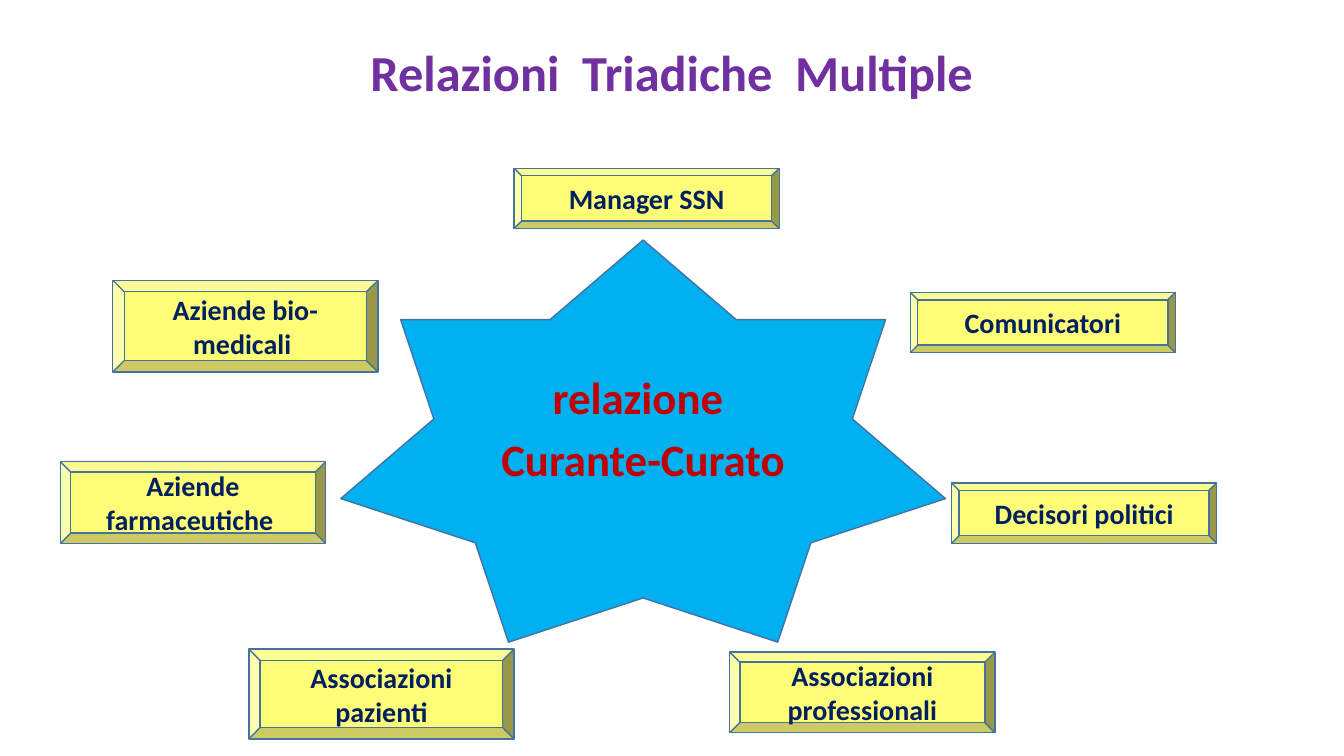
from pptx import Presentation
from pptx.dml.color import RGBColor
from pptx.enum.shapes import MSO_SHAPE
from pptx.enum.text import MSO_ANCHOR, PP_ALIGN
from pptx.util import Pt

PURPLE = RGBColor(0x70, 0x30, 0xA0)
RED = RGBColor(0xC0, 0x00, 0x00)
NAVY = RGBColor(0x00, 0x20, 0x60)
SKY = RGBColor(0x00, 0xB0, 0xF0)
YELLOW = RGBColor(0xFF, 0xFD, 0x78)
OUTLINE = RGBColor(0x43, 0x73, 0x9E)

# Content: boxes are (words, left, top, height) in points
TITLE = "Relazioni  Triadiche  Multiple"
CORE = ["relazione ", "Curante-Curato"]
ACTORS = [
    ("Manager SSN", 367.2, 120.2, 43.2),
    ("Comunicatori", 650.2, 208.8, 43.2),
    ("Decisori politici", 679.7, 344.9, 43.2),
    ("Associazioni professionali", 521.3, 465.8, 57.6),
    ("Associazioni pazienti", 177.8, 463.7, 64.1),
    ("Aziende farmaceutiche ", 43.2, 329.8, 58.3),
    ("Aziende bio-medicali ", 80.6, 200.2, 65.5),
]
ACTOR_WIDTH = 189.4


def write(frame, lines, size, color, line_spacing=1.0, gap=0):
    frame.word_wrap = True
    frame.vertical_anchor = MSO_ANCHOR.MIDDLE
    frame.text = "\n".join(lines)
    for i, paragraph in enumerate(frame.paragraphs):
        paragraph.alignment = PP_ALIGN.CENTER
        paragraph.line_spacing = line_spacing
        paragraph.space_before = Pt(gap if i else 0)
        paragraph.font.name = "Calibri"
        paragraph.font.size = Pt(size)
        paragraph.font.bold = True
        paragraph.font.color.rgb = color


def add_figure(slide, preset, box, fill):
    figure = slide.shapes.add_shape(preset, *map(Pt, box))
    figure.shadow.inherit = False
    figure.fill.solid()
    figure.fill.fore_color.rgb = fill
    figure.line.color.rgb = OUTLINE
    figure.line.width = Pt(1)
    return figure


def main():
    deck = Presentation()
    deck.slide_width, deck.slide_height = Pt(960), Pt(540)
    slide = deck.slides.add_slide(deck.slide_layouts[5])

    # Title
    title = slide.shapes.title
    title.left, title.top, title.width, title.height = map(Pt, (66, 28.8, 828, 50.4))
    write(title.text_frame, [TITLE], 36, PURPLE, 0.9)

    # Central relationship
    star = add_figure(slide, MSO_SHAPE.STAR_7_POINT, (243.4, 171.4, 432, 287.3), SKY)
    write(star.text_frame, CORE, 32, RED, 0.9, 10)

    # Actors around the star, clockwise
    for words, left, top, height in ACTORS:
        actor = add_figure(slide, MSO_SHAPE.BEVEL, (left, top, ACTOR_WIDTH, height), YELLOW)
        write(actor.text_frame, [words], 20, NAVY)

    deck.save("out.pptx")


if __name__ == "__main__":
    main()
